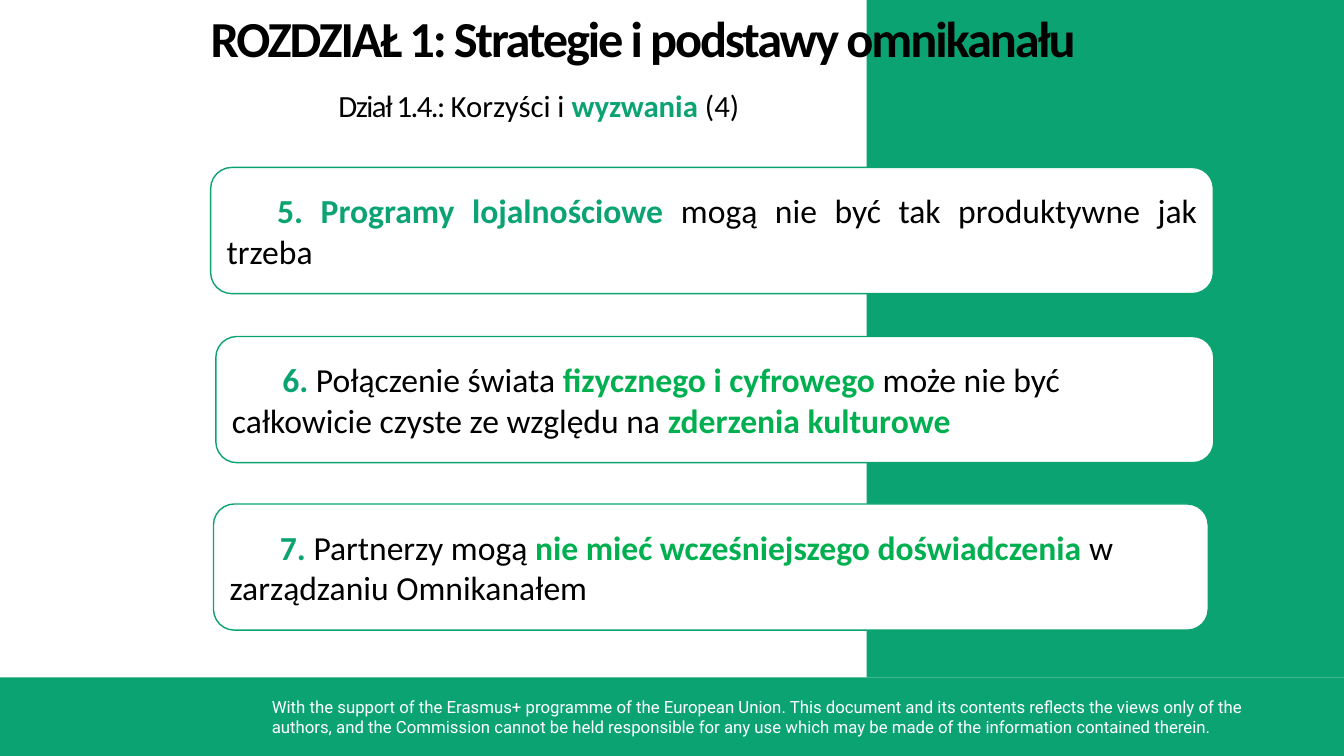
from pptx import Presentation
from pptx.dml.color import RGBColor as Rgb
from pptx.enum.shapes import MSO_SHAPE as Shape
from pptx.enum.text import MSO_ANCHOR as Anchor, MSO_AUTO_SIZE as Fit, PP_ALIGN as Align
from pptx.util import Cm, Pt

HUES = {"green": "0CA373", "leaf": "00B050", "black": "000000", "white": "FFFFFF"}
WIDE, HIGH = 33.87, 19.05
BAND = 17.07
CARDS = [
    ((5.31, 4.22, 25.27, 3.18), Align.JUSTIFY, [
        ("\t5. Programy lojalnościowe ", "green"),
        ("mogą nie być tak produktywne jak trzeba", "black")]),
    ((5.44, 8.48, 25.15, 3.18), Align.LEFT, [
        ("\t6. ", "green"),
        ("Połączenie świata ", "black"),
        ("fizycznego i cyfrowego ", "leaf"),
        ("może nie być całkowicie czyste ze względu na ", "black"),
        ("zderzenia kulturowe", "leaf")]),
    ((5.38, 12.7, 25.07, 3.18), Align.LEFT, [
        ("\t7. ", "green"),
        ("Partnerzy mogą ", "black"),
        ("nie mieć wcześniejszego doświadczenia ", "leaf"),
        ("w zarządzaniu Omnikanałem", "black")]),
]


def tint(hue):
    return Rgb.from_string(HUES[hue])


def style(run, size, hue, bold=False, face="Calibri", track=0):
    font = run.font
    font.name, font.size, font.bold = face, Pt(size), bold
    font.color.rgb = tint(hue)
    if track:
        run._r.get_or_add_rPr().set("spc", str(track))


def fill_runs(para, parts, size):
    for text, hue in parts:
        run = para.add_run()
        run.text = text
        style(run, size, hue, hue != "black")


def block(slide, box, hue, kind=Shape.RECTANGLE):
    shape = slide.shapes.add_shape(kind, *map(Cm, box))
    shape.shadow.inherit = False
    shape.fill.solid()
    shape.fill.fore_color.rgb = tint(hue)
    shape.line.fill.background()
    return shape


def trim(frame, top):
    frame.word_wrap = True
    frame.auto_size = Fit.NONE
    frame.vertical_anchor = Anchor.TOP
    frame.margin_left = frame.margin_right = frame.margin_bottom = 0
    frame.margin_top = Cm(top)


def footer(slide, box):
    left, top, width, height = box
    block(slide, box, "green")
    note = slide.shapes.add_textbox(Cm(left + 6.6), Cm(top + 0.35), Cm(width - 7.4), Cm(1.27))
    frame = note.text_frame
    frame.word_wrap = True
    frame.text = (
        "With the support of the Erasmus+ programme of the European Union. "
        "This document and its contents reflects the views only of the authors, "
        "and the Commission cannot be held responsible for any use which may be "
        "made of the information contained therein.")
    style(frame.paragraphs[0].runs[0], 12, "white", face="Roboto")


def header(slide, box):
    left, top, width, height = box
    title = slide.shapes.title
    title.left, title.top = Cm(left + 1.37), Cm(top)
    title.width, title.height = Cm(width - 1.37), Cm(1.42)
    trim(title.text_frame, 0.03)
    title.text_frame.text = "ROZDZIAŁ 1: Strategie i podstawy omnikanału"
    para = title.text_frame.paragraphs[0]
    para.alignment, para.line_spacing = Align.LEFT, 0.9
    style(para.runs[0], 36, "black", True, track=-150)

    sub = slide.shapes.add_textbox(Cm(left), Cm(top + 1.8), Cm(19.28), Cm(0.99))
    trim(sub.text_frame, 0.05)
    para = sub.text_frame.paragraphs[0]
    para.text = "Dział 1.4.: "
    para.alignment = Align.CENTER
    style(para.runs[0], 22, "black", track=-110)
    fill_runs(para, [("Korzyści i ", "black"), ("wyzwania", "green"), (" (4)", "black")], 22)


def card(slide, box, align, parts):
    shape = block(slide, box, "white", Shape.ROUNDED_RECTANGLE)
    shape.line.color.rgb = tint("green")
    shape.line.width = Pt(1)
    frame = shape.text_frame
    frame.word_wrap = True
    frame.vertical_anchor = Anchor.MIDDLE
    para = frame.paragraphs[0]
    para.alignment = align
    fill_runs(para, parts, 24)


def main():
    deck = Presentation()
    deck.slide_width, deck.slide_height = Cm(WIDE), Cm(HIGH)
    slide = deck.slides.add_slide(deck.slide_layouts[5])
    tree = slide.shapes._spTree
    title = slide.shapes.title._element
    footer(slide, (0, BAND, WIDE, HIGH - BAND))
    block(slide, (21.84, 0, WIDE - 21.84, BAND), "green")
    tree.append(title)
    header(slide, (3.94, 0.33, 25.55, 2.79))
    for box, align, parts in CARDS:
        card(slide, box, align, parts)
    deck.save("out.pptx")


if __name__ == "__main__":
    main()
